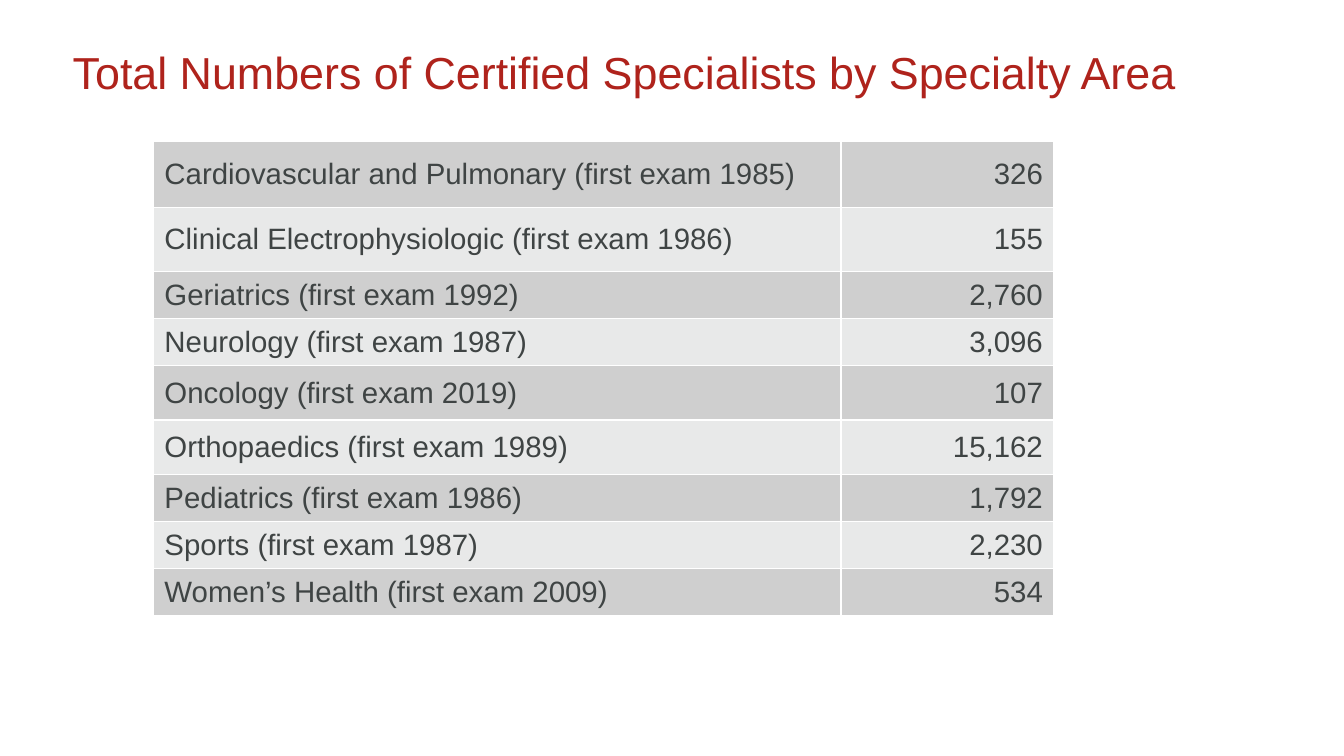
from lxml import etree
from pptx import Presentation
from pptx.dml.color import RGBColor
from pptx.enum.text import MSO_ANCHOR, PP_ALIGN
from pptx.oxml.ns import qn
from pptx.util import Pt

TITLE = "Total Numbers of Certified Specialists by Specialty Area"
# specialty, first exam year, certified specialists, row height
SPECIALTIES = [
    ("Cardiovascular and Pulmonary", 1985, 326, 47.3),
    ("Clinical Electrophysiologic", 1986, 155, 46),
    ("Geriatrics", 1992, 2760, 33.6),
    ("Neurology", 1987, 3096, 33.6),
    ("Oncology", 2019, 107, 38.8),
    ("Orthopaedics", 1989, 15162, 38.8),
    ("Pediatrics", 1986, 1792, 33.6),
    ("Sports", 1987, 2230, 33.6),
    ("Women’s Health", 2009, 534, 33.6),
]
COLUMNS = [(491, PP_ALIGN.LEFT), (152, PP_ALIGN.RIGHT)]
COLORS = {"title": "AF231C", "text": "3F4444", "border": "FFFFFF"}
BANDS = ["CFCFCF", "E8E9E9"]
FONT = "Arial"


def style_paragraph(paragraph, size, color):
    paragraph.font.name = FONT
    paragraph.font.size = Pt(size)
    paragraph.font.color.rgb = RGBColor.from_string(color)


def add_borders(cell):
    """Draw a thin line on all four sides; call before filling the cell."""
    properties = cell._tc.get_or_add_tcPr()
    for side in ("lnL", "lnR", "lnT", "lnB"):
        line = etree.SubElement(properties, qn(f"a:{side}"), w=str(Pt(1)))
        fill = etree.SubElement(line, qn("a:solidFill"))
        etree.SubElement(fill, qn("a:srgbClr"), val=COLORS["border"])


def add_title(slide):
    frame = slide.shapes.add_textbox(Pt(52), Pt(36), Pt(908), Pt(78)).text_frame
    frame.word_wrap = True
    frame.margin_left = frame.margin_right = 0
    frame.margin_top = frame.margin_bottom = 0
    heading = frame.paragraphs[0]
    heading.text = TITLE
    heading.line_spacing = 0.9
    style_paragraph(heading, 32, COLORS["title"])


def add_specialty_table(slide):
    width = sum(column_width for column_width, _ in COLUMNS)
    height = sum(specialty[-1] for specialty in SPECIALTIES)
    table = slide.shapes.add_table(
        len(SPECIALTIES), len(COLUMNS), Pt(109.7), Pt(100.8), Pt(width), Pt(height)
    ).table
    table.first_row = table.horz_banding = False
    for column, (column_width, _) in zip(table.columns, COLUMNS):
        column.width = Pt(column_width)

    for index, (name, year, count, row_height) in enumerate(SPECIALTIES):
        row = table.rows[index]
        row.height = Pt(row_height)
        texts = (f"{name} (first exam {year})", f"{count:,}")
        for cell, text, (_, alignment) in zip(row.cells, texts, COLUMNS):
            add_borders(cell)
            cell.fill.solid()
            cell.fill.fore_color.rgb = RGBColor.from_string(BANDS[index % 2])
            cell.vertical_anchor = MSO_ANCHOR.MIDDLE
            cell.margin_left = cell.margin_right = Pt(7.8)
            cell.margin_top = cell.margin_bottom = Pt(3.6)
            entry = cell.text_frame.paragraphs[0]
            entry.text = text
            entry.alignment = alignment
            style_paragraph(entry, 21, COLORS["text"])


def main():
    presentation = Presentation()
    presentation.slide_width, presentation.slide_height = Pt(960), Pt(540)
    slide = presentation.slides.add_slide(presentation.slide_layouts[6])
    add_title(slide)
    add_specialty_table(slide)
    presentation.save("out.pptx")


if __name__ == "__main__":
    main()
